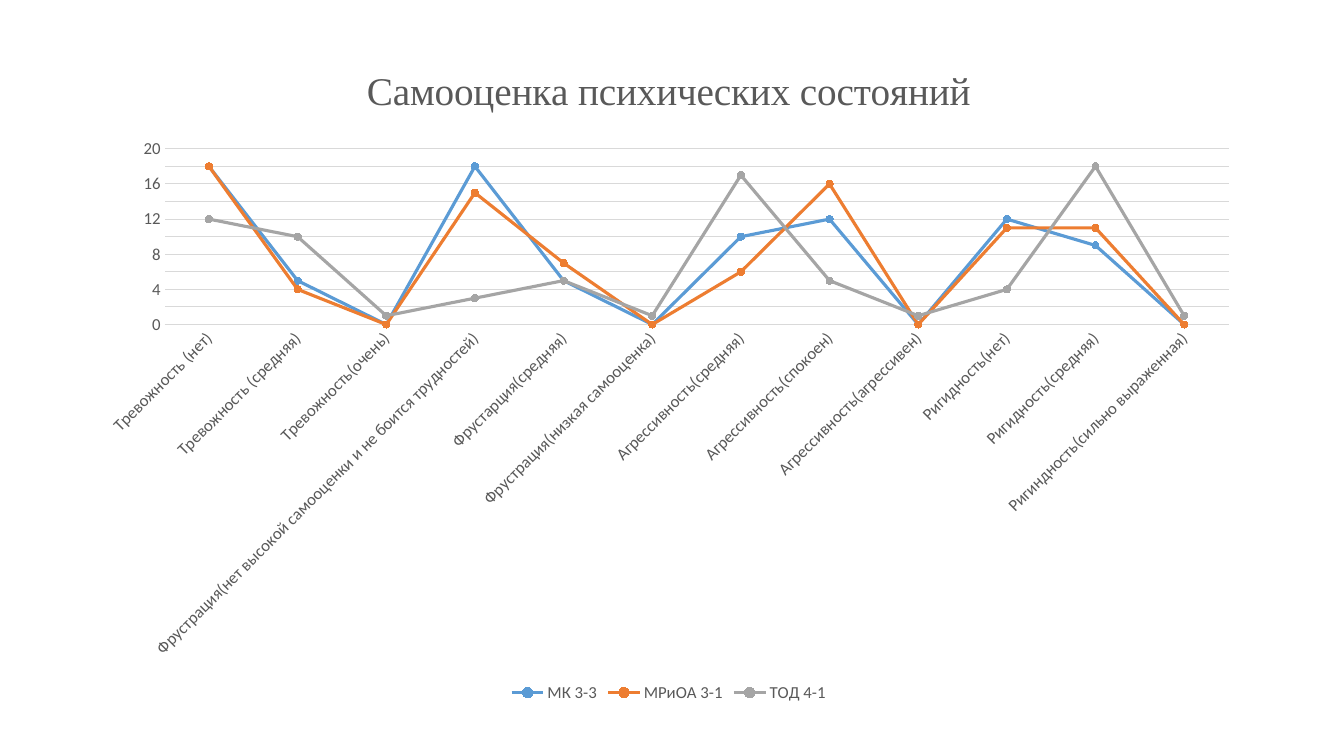
from dataclasses import dataclass

from pptx import Presentation
from pptx.chart.data import CategoryChartData
from pptx.dml.color import RGBColor
from pptx.enum.chart import (XL_CHART_TYPE, XL_LEGEND_POSITION,
                             XL_MARKER_STYLE, XL_TICK_MARK)
from pptx.util import Pt


@dataclass(frozen=True)
class Theme:
    text: str = "595959"
    grid: str = "D9D9D9"
    lines: tuple = ("5B9BD5", "ED7D31", "A5A5A5")
    body: str = "Calibri"
    head: str = "Times New Roman"
    small: int = 12
    large: int = 28


THEME = Theme()

TITLE = "Самооценка психических состояний"
STATES = [
    "Тревожность (нет)",
    "Тревожность (средняя)",
    "Тревожность(очень)",
    "Фрустрация(нет высокой самооценки и не боится трудностей)",
    "Фрустарция(средняя)",
    "Фрустрация(низкая самооценка)",
    "Агрессивность(средняя)",
    "Агрессивность(спокоен)",
    "Агрессивность(агрессивен)",
    "Ригидность(нет)",
    "Ригидность(средняя)",
    "Ригиндность(сильно выраженная)",
]
GROUPS = {
    "МК 3-3": (18, 5, 0, 18, 5, 0, 10, 12, 0, 12, 9, 0),
    "МРиОА 3-1": (18, 4, 0, 15, 7, 0, 6, 16, 0, 11, 11, 0),
    "ТОД 4-1": (12, 10, 1, 3, 5, 1, 17, 5, 1, 4, 18, 1),
}


def apply(item, **values):
    for name, value in values.items():
        setattr(item, name, value)


def set_font(font, face, size):
    apply(font, name=face, size=Pt(size), bold=False)
    font.color.rgb = RGBColor.from_string(THEME.text)


def set_line(line, color, width):
    line.color.rgb = RGBColor.from_string(color)
    line.width = Pt(width)


def add_chart(slide):
    data = CategoryChartData()
    data.categories = STATES
    for name, values in GROUPS.items():
        data.add_series(name, values)
    frame = slide.shapes.add_chart(
        XL_CHART_TYPE.LINE_MARKERS,
        Pt(61.2), Pt(28.8), Pt(833), Pt(476), data)
    return frame.chart


def set_title(chart):
    chart.has_title = True
    frame = chart.chart_title.text_frame
    frame.text = TITLE
    set_font(frame.paragraphs[0].runs[0].font, THEME.head, THEME.large)
    chart.chart_title.include_in_layout = False


def set_axes(chart):
    marks = {"major_tick_mark": XL_TICK_MARK.NONE,
             "minor_tick_mark": XL_TICK_MARK.NONE}
    states, scale = chart.category_axis, chart.value_axis
    for axis in (states, scale):
        apply(axis, **marks)
        set_font(axis.tick_labels.font, THEME.body, THEME.small)

    # Slanted state names
    set_line(states.format.line, THEME.grid, 0.75)
    states._element.txPr.bodyPr.set("rot", "-2700000")

    # Score scale with light grid
    apply(scale, minimum_scale=0, maximum_scale=20, major_unit=2,
          has_major_gridlines=True)
    scale.format.line.fill.background()
    set_line(scale.major_gridlines.format.line, THEME.grid, 0.75)


def set_series(chart):
    for series, color in zip(chart.plots[0].series, THEME.lines):
        series.smooth = False
        set_line(series.format.line, color, 2.25)
        mark = series.marker
        apply(mark, style=XL_MARKER_STYLE.CIRCLE, size=5)
        mark.format.fill.solid()
        mark.format.fill.fore_color.rgb = RGBColor.from_string(color)
        set_line(mark.format.line, color, 0.75)


def set_legend(chart):
    chart.has_legend = True
    apply(chart.legend, position=XL_LEGEND_POSITION.BOTTOM,
          include_in_layout=False)
    set_font(chart.legend.font, THEME.body, THEME.small)


def main():
    deck = Presentation()
    apply(deck, slide_width=Pt(960), slide_height=Pt(540))
    slide = deck.slides.add_slide(deck.slide_layouts.get_by_name("Blank"))

    # Line chart of the three groups
    chart = add_chart(slide)
    set_font(chart.font, THEME.body, THEME.small)
    chart.plots[0].vary_by_categories = False
    set_title(chart)
    set_axes(chart)
    set_series(chart)
    set_legend(chart)

    deck.save("out.pptx")


if __name__ == "__main__":
    main()
